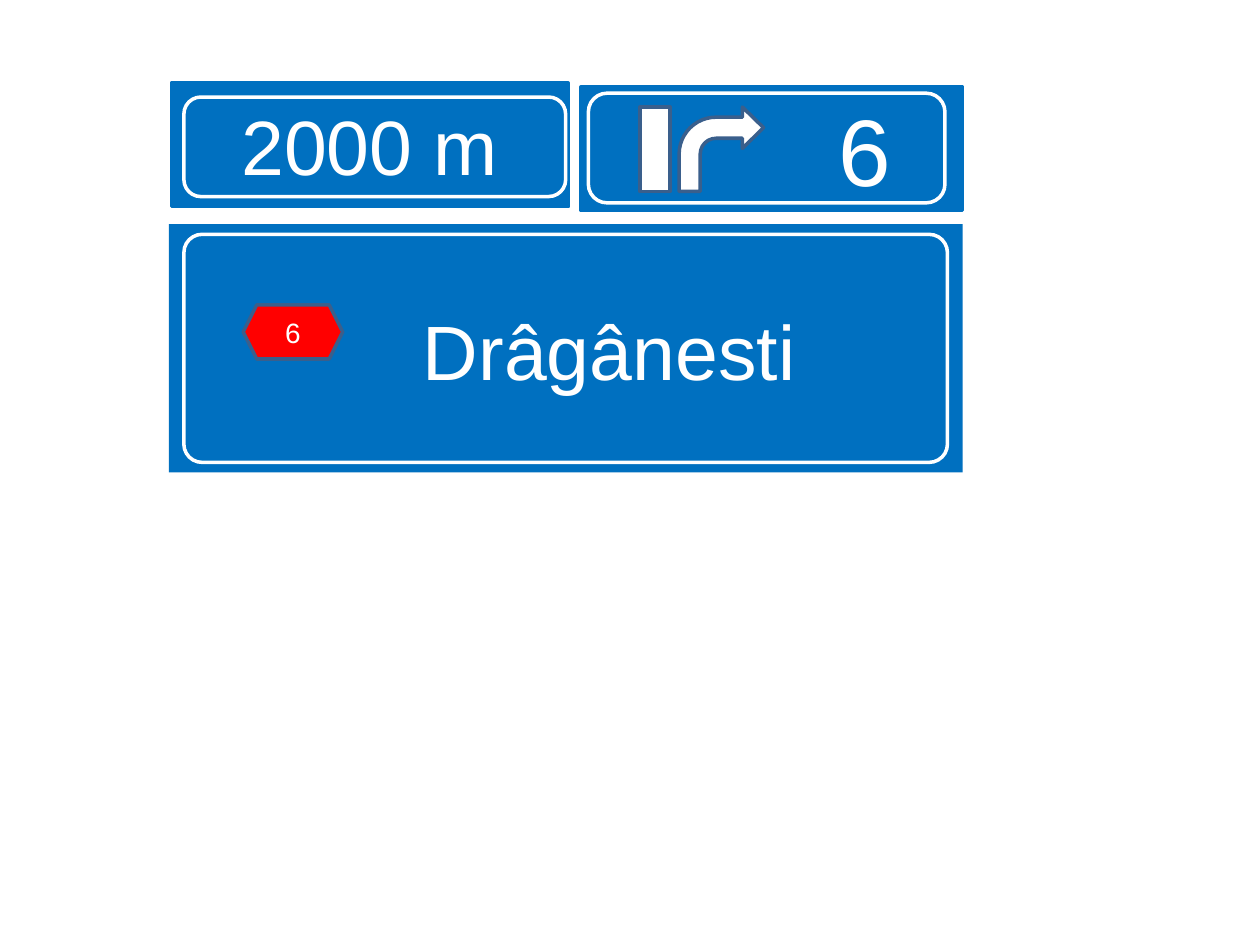
from pptx import Presentation
from pptx.dml.color import RGBColor
from pptx.enum.shapes import MSO_SHAPE as Shape
from pptx.enum.text import MSO_ANCHOR as Anchor, PP_ALIGN as Align
from pptx.util import Inches, Pt

COLORS = {"sign": "0070C0", "white": "FFFFFF", "edge": "3A5F8C", "road": "FF0000"}


def color(name):
    return RGBColor.from_string(COLORS[name])


def add_part(slide, kind, box, fill=None, line=None, adjustments=()):
    """Add one flat piece of the sign; box is left, top, width, height in inches."""
    part = slide.shapes.add_shape(kind, *map(Inches, box))
    part.shadow.inherit = False
    for index, value in enumerate(adjustments):
        part.adjustments[index] = value
    if fill:
        part.fill.solid()
        part.fill.fore_color.rgb = color(fill)
    else:
        part.fill.background()
    if line:
        part.line.color.rgb = color(line)
        part.line.width = Pt(2)
    else:
        part.line.fill.background()
    return part


def add_label(part, text, size, left=0.1, bottom=0.05, anchor=Anchor.MIDDLE):
    frame = part.text_frame
    frame.word_wrap = True
    frame.vertical_anchor = anchor
    frame.margin_left = Inches(left)
    frame.margin_bottom = Inches(bottom)
    paragraph = frame.paragraphs[0]
    paragraph.text = text
    paragraph.alignment = Align.CENTER
    paragraph.font.name = "Arial"
    paragraph.font.size = Pt(size)
    paragraph.font.color.rgb = color("white")


def add_border(slide, box, corner=0.17):
    add_part(slide, Shape.ROUNDED_RECTANGLE, box, line="white", adjustments=[corner])


def add_plate(slide, box):
    return add_part(slide, Shape.ROUNDED_RECTANGLE, box, "sign", "sign", [0])


def main():
    prs = Presentation()
    prs.slide_width, prs.slide_height = Inches(10), Inches(7.5)
    slide = prs.slides.add_slide(prs.slide_layouts[6])

    distance = add_plate(slide, (1.36, 0.66, 3.15, 0.98))
    add_label(distance, "2000 m", 44)

    exit_plate = add_plate(slide, (4.61, 0.69, 3.03, 0.98))
    add_label(exit_plate, "6", 54, left=1.57)
    add_part(slide, Shape.RECTANGLE, (5.08, 0.85, 0.24, 0.67), "white", "edge")
    add_part(slide, Shape.BENT_ARROW, (5.39, 0.85, 0.67, 0.67), "white", "edge",
             [0.25, 0.245, 0.25, 0.438])

    destination = add_part(slide, Shape.RECTANGLE, (1.34, 1.78, 6.3, 1.97), "sign")
    add_label(destination, "Drâgânesti", 44, left=0.79, bottom=0.61,
              anchor=Anchor.BOTTOM)
    road_number = add_part(slide, Shape.HEXAGON, (1.93, 2.42, 0.79, 0.43),
                           "road", "edge")
    add_label(road_number, "6", 16)

    add_border(slide, (1.46, 0.77, 3.03, 0.79))
    add_border(slide, (4.67, 0.74, 2.83, 0.87))
    add_border(slide, (1.46, 1.86, 6.06, 1.81), corner=0.08)

    prs.save("out.pptx")


if __name__ == "__main__":
    main()
